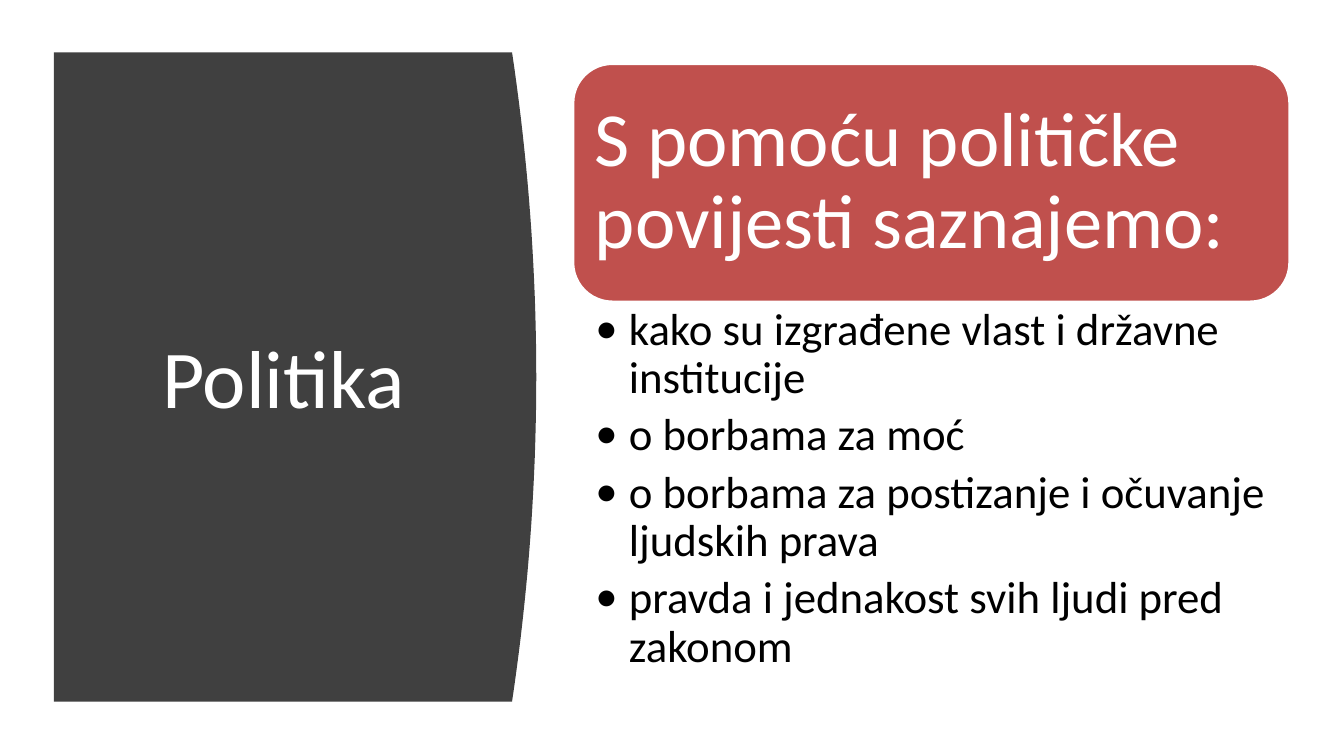
from lxml import etree
from pptx import Presentation
from pptx.dml.color import RGBColor
from pptx.enum.shapes import MSO_SHAPE
from pptx.enum.text import MSO_ANCHOR, MSO_AUTO_SIZE, PP_ALIGN
from pptx.oxml.ns import qn
from pptx.util import Inches, Pt

ROUND = MSO_SHAPE.ROUNDED_RECTANGLE
MIDDLE, TOP = MSO_ANCHOR.MIDDLE, MSO_ANCHOR.TOP
CENTER, LEFT = PP_ALIGN.CENTER, PP_ALIGN.LEFT
FIXED = MSO_AUTO_SIZE.NONE
FONT = "Calibri"
COLORS = {"panel": "404040", "card": "C0504D", "light": "FFFFFF", "dark": "000000"}
POINTS = [
    "kako su izgrađene vlast i državne institucije",
    "o borbama za moć",
    "o borbama za postizanje i očuvanje ljudskih prava",
    "pravda i jednakost svih ljudi pred zakonom",
]


def color(name):
    return RGBColor.from_string(COLORS[name])


def add_run(para, text, size, name):
    run = para.add_run()
    run.text = text
    run.font.name = FONT
    run.font.size = Pt(size)
    run.font.color.rgb = color(name)


def set_frame(frame, anchor, margins):
    frame.word_wrap = True
    frame.auto_size = FIXED
    frame.vertical_anchor = anchor
    (frame.margin_left, frame.margin_top,
     frame.margin_right, frame.margin_bottom) = map(Inches, margins)


def add_bullet(para, size):
    props = para._p.get_or_add_pPr()
    props.set("marL", str(Inches(0.25)))
    props.set("indent", str(-Inches(0.25)))
    etree.SubElement(props, qn("a:buFont")).set("typeface", FONT)
    etree.SubElement(props, qn("a:buChar")).set("char", "•")
    para.font.size = Pt(size)
    para.font.name = FONT


def add_panel(slide, left, top, width, height):
    bulge, steps = 0.18, 40
    edge = []
    for i in range(steps + 1):
        t = i / steps
        x = left + width - bulge * (2 * t - 1) ** 2
        edge.append((Inches(x), Inches(top + height * t)))
    form = slide.shapes.build_freeform(Inches(left), Inches(top))
    form.add_line_segments(edge + [(Inches(left), Inches(top + height))], close=True)
    panel = form.convert_to_shape()
    panel.shadow.inherit = False
    panel.fill.solid()
    panel.fill.fore_color.rgb = color("panel")
    panel.line.fill.background()
    slide.shapes._spTree.insert(2, panel._element)

    title = slide.shapes.title
    title.left, title.top = Inches(left + 0.31), Inches(top + 0.44)
    title.width, title.height = Inches(2.8), Inches(3.93)
    set_frame(title.text_frame, MIDDLE, (0.1, 0.05, 0.1, 0.05))
    para = title.text_frame.paragraphs[0]
    para.alignment = CENTER
    add_run(para, "Politika", 44, "light")


def add_topic(slide, left, top, width, height):
    head = 1.78
    card = slide.shapes.add_shape(
        ROUND, Inches(left), Inches(top), Inches(width), Inches(head))
    card.shadow.inherit = False
    card.fill.solid()
    card.fill.fore_color.rgb = color("card")
    card.line.color.rgb = color("light")
    card.line.width = Pt(2)
    set_frame(card.text_frame, MIDDLE, (0.08, 0.08, 0.08, 0.08))
    para = card.text_frame.paragraphs[0]
    para.alignment = LEFT
    para.line_spacing = 0.9
    add_run(para, "S pomoću političke povijesti saznajemo:", 41, "light")

    box = slide.shapes.add_textbox(
        Inches(left), Inches(top + head), Inches(width), Inches(height - head))
    frame = box.text_frame
    set_frame(frame, TOP, (0.17, 0.03, 0.17, 0.03))
    for i, text in enumerate(POINTS):
        para = frame.add_paragraph() if i else frame.paragraphs[0]
        para.level = 1
        para.alignment = LEFT
        para.line_spacing = 0.9
        para.space_after = Pt(4.8)
        add_bullet(para, 24)
        add_run(para, text, 24, "dark")


def main():
    deck = Presentation()
    deck.slide_width, deck.slide_height = Inches(10), Inches(5.625)
    slide = deck.slides.add_slide(deck.slide_layouts[5])
    add_panel(slide, 0.4, 0.39, 3.59, 4.83)
    add_topic(slide, 4.26, 0.47, 5.34, 4.66)
    deck.save("out.pptx")


if __name__ == "__main__":
    main()
